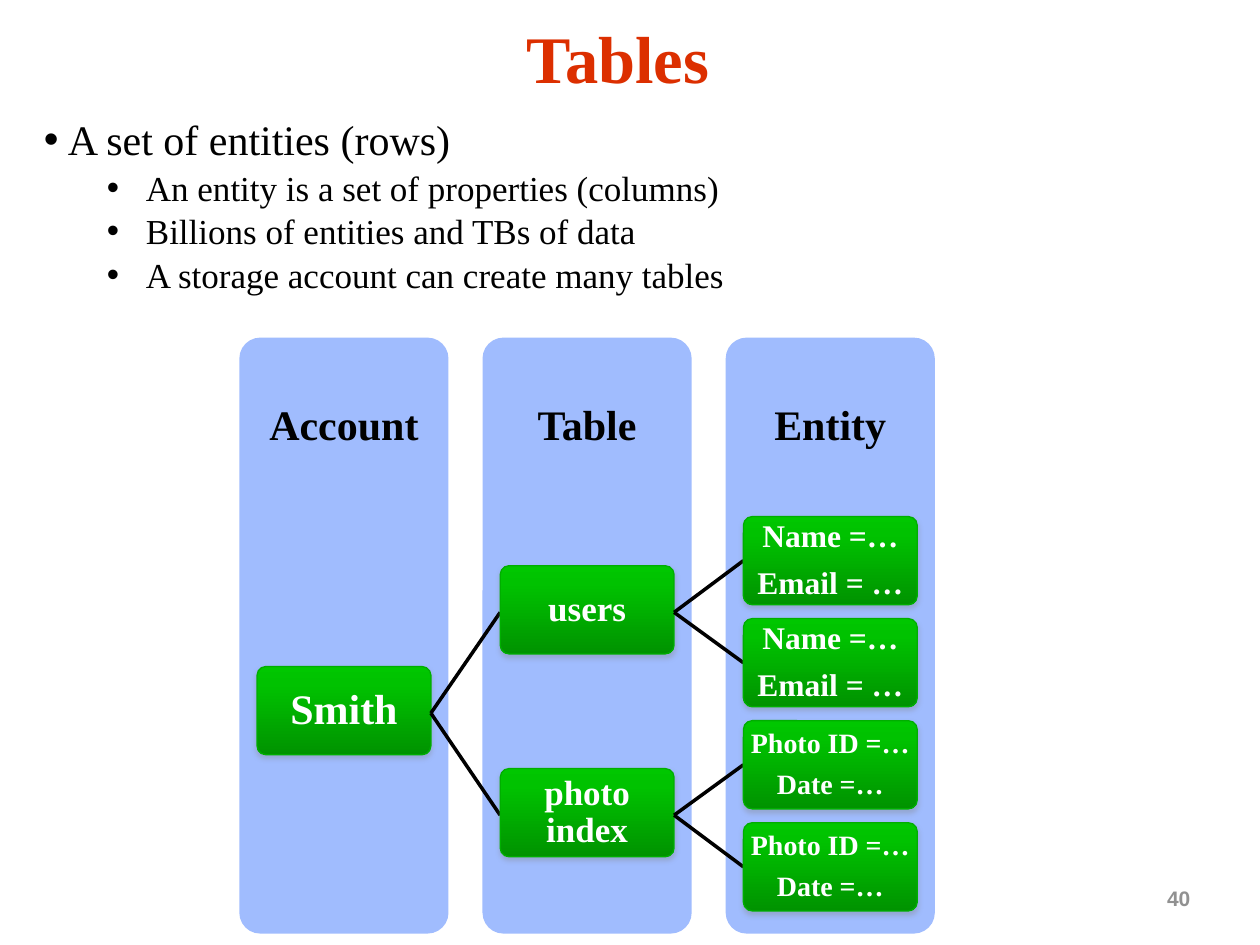
import pptx
import pptx.util
import pptx.oxml
import pptx.oxml.ns
import pptx.dml.color
import pptx.enum.shapes
import pptx.enum.text

Inches = pptx.util.Inches
Pt = pptx.util.Pt
SERIF = "Times New Roman"
HEX = {
    "title": "DC2F00", "text": "000000", "page": "919191", "panel": "A0BCFE",
    "node": "FFFFFF", "edge": "00AE00", "shade": "808080",
}
STOPS = [(0, "00C700"), (20, "00C200"), (100, "009300")]


def tint(name):
    """Return the named colour."""
    return pptx.dml.color.RGBColor.from_string(HEX[name])


def make(tag, inner):
    """Return a DrawingML element with the given content."""
    space = pptx.oxml.ns.nsdecls("a")
    return pptx.oxml.parse_xml(f"<a:{tag} {space}>{inner}</a:{tag}>")


def write(shape, lines, size=24, color="text", bold=True, font=SERIF,
          align="CENTER", inset=None, lead=None, gap=0, dents=None, wrap=True):
    """Fill a shape with formatted paragraphs."""
    frame = shape.text_frame
    frame.word_wrap = wrap
    frame.vertical_anchor = pptx.enum.text.MSO_ANCHOR.MIDDLE
    if inset is not None:
        frame.margin_left = frame.margin_right = Inches(inset)
        frame.margin_top = frame.margin_bottom = Inches(inset)
    sizes = size if isinstance(size, list) else [size] * len(lines)
    for i, (line, pts) in enumerate(zip(lines, sizes)):
        para = frame.add_paragraph() if i else frame.paragraphs[0]
        if dents:
            left, hang = dents[i]
            prop = para._p.get_or_add_pPr()
            prop.set("marL", str(Inches(left)))
            prop.set("indent", str(-Inches(hang)))
            for tag, attr in (("buFont", 'typeface="Arial"'), ("buChar", 'char="•"')):
                space = pptx.oxml.ns.nsdecls("a")
                prop.append(pptx.oxml.parse_xml(f"<a:{tag} {space} {attr}/>"))
        para.alignment = getattr(pptx.enum.text.PP_ALIGN, align)
        if lead:
            para.line_spacing = lead
        if i and gap:
            para.space_before = Pt(gap)
        run = para.add_run()
        run.text = line
        run.font.name, run.font.size, run.font.bold = font, Pt(pts), bold
        run.font.color.rgb = tint(color)


def label(slide, box, lines, **style):
    """Add a text box."""
    write(slide.shapes.add_textbox(*map(Inches, box)), lines, **style)


def plate(slide, box):
    """Add a rounded rectangle without a shadow."""
    kind = pptx.enum.shapes.MSO_SHAPE.ROUNDED_RECTANGLE
    shape = slide.shapes.add_shape(kind, *map(Inches, box))
    shape.adjustments[0] = 0.1
    shape.shadow.inherit = False
    return shape


def panel(slide, box, head):
    """Add a column with its heading."""
    shape = plate(slide, box)
    shape.fill.solid()
    shape.fill.fore_color.rgb = tint("panel")
    shape.line.fill.background()
    left, top, width, _ = box
    label(slide, (left, top, width, 1.42), [head], inset=0.16, lead=0.9)


def node(slide, box, lines, size):
    """Add a green gradient box with a soft shadow."""
    shape = plate(slide, box)
    props = shape._element.spPr
    stops = "".join(
        f'<a:gs pos="{pos * 1000}"><a:srgbClr val="{hue}"/></a:gs>' for pos, hue in STOPS)
    geom = props.find(pptx.oxml.ns.qn("a:prstGeom"))
    geom.addnext(make("gradFill", f'<a:gsLst>{stops}</a:gsLst><a:lin ang="5400000"/>'))
    shape.line.color.rgb = tint("edge")
    shape.line.width = Pt(0.75)
    glow = make("effectLst", (
        f'<a:outerShdw blurRad="{Pt(3.1)}" dist="{Pt(1.8)}" dir="5400000" rotWithShape="0">'
        f'<a:srgbClr val="{HEX["shade"]}"><a:alpha val="35000"/></a:srgbClr></a:outerShdw>'))
    old = props.find(pptx.oxml.ns.qn("a:effectLst"))
    props.replace(old, glow)
    write(shape, lines, size=size, color="node", inset=0.03, lead=0.9, gap=0.4 * size)


def link(slide, *ends):
    """Add a black line between two points."""
    kind = pptx.enum.shapes.MSO_CONNECTOR.STRAIGHT
    line = slide.shapes.add_connector(kind, *map(Inches, ends))
    line.line.color.rgb = tint("text")
    line.line.width = Pt(2)
    line._element.spPr.append(make("effectLst", ""))


def tree(slide, box):
    """Draw the account, table and entity columns with their nodes."""
    left, top, width, high = box
    step, wide, tall = 1.93, 1.38, 0.7
    for i, head in enumerate(["Account", "Table", "Entity"]):
        panel(slide, (left + i * step, top, width, high), head)
    cols = [left + 0.14 + i * step for i in range(3)]
    root = top + 2.61
    node(slide, (cols[0], root, wide, tall), ["Smith"], 24)
    kids = [
        ("users", ["Name =…", "Email = …"], 18),
        ("photo index", ["Photo ID =…", "Date =…"], 16),
    ]
    for i, (name, lines, size) in enumerate(kids):
        mid = top + 1.81 + i * 1.61
        link(slide, cols[0] + wide, root + 0.37, cols[1], mid + 0.37)
        node(slide, (cols[1], mid, wide, tall), [name], 20)
        for j in range(2):
            leaf = top + 1.42 + (2 * i + j) * 0.81
            link(slide, cols[1] + wide, mid + 0.37, cols[2], leaf + 0.35)
            node(slide, (cols[2], leaf, wide, tall), lines, size)


def points(slide, box):
    """Add the bulleted list."""
    lines = [
        "A set of entities (rows)",
        "An entity is a set of properties (columns)",
        "Billions of entities and TBs of data",
        "A storage account can create many tables",
    ]
    label(slide, box, lines, size=[24, 20, 20, 20], bold=False, align="LEFT",
          gap=1, dents=[(0.19, 0.19)] + [(0.81, 0.31)] * 3)


def main():
    """Build and save the slide."""
    deck = pptx.Presentation()
    deck.slide_width, deck.slide_height = Inches(10), Inches(7.5)
    slide = deck.slides.add_slide(deck.slide_layouts[6])
    label(slide, (9.13, 6.98, 0.45, 0.3), ["40"], size=12, color="page",
          font="Arial", wrap=False)
    label(slide, (0.33, 0.08, 9.15, 0.83), ["Tables"], size=38, color="title", lead=0.9)
    tree(slide, (1.9, 2.68, 1.66, 4.73))
    points(slide, (0.25, 0.5, 9.4, 2.25))
    deck.save("out.pptx")


if __name__ == "__main__":
    main()
